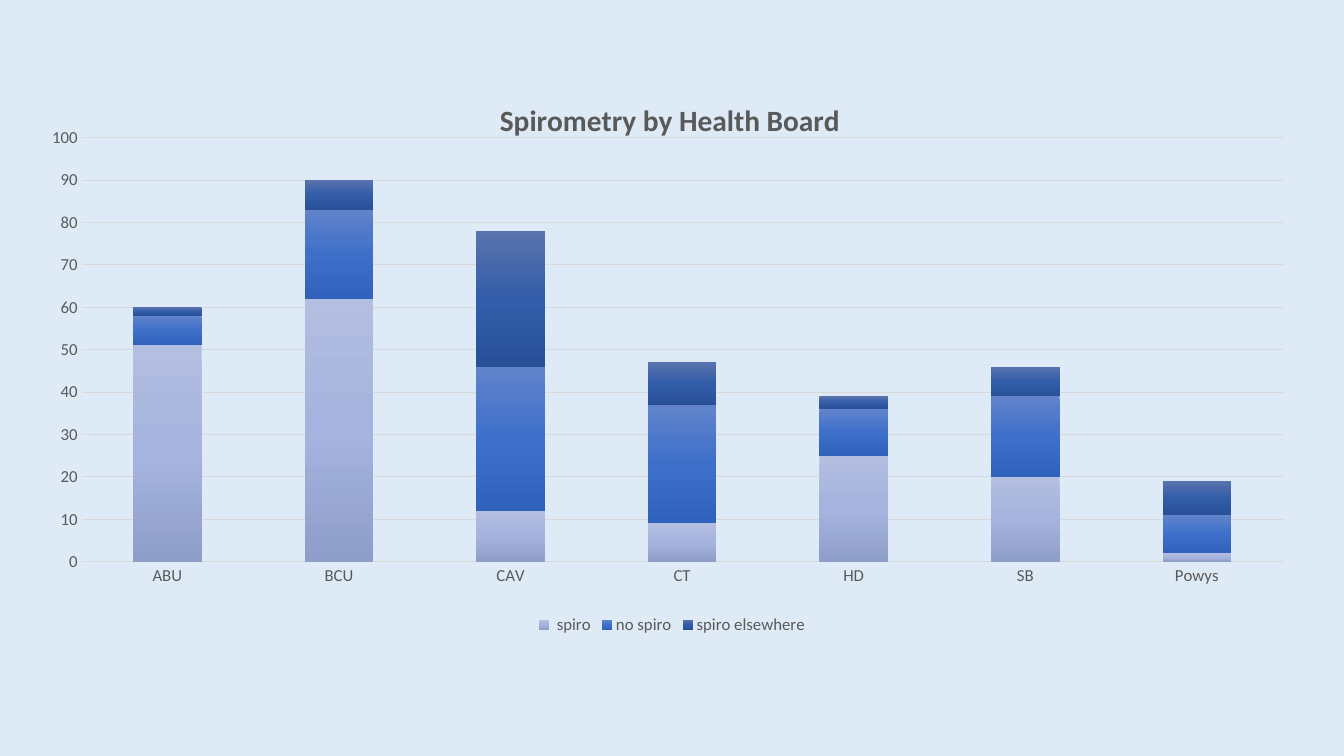
from dataclasses import dataclass
from typing import Optional

from lxml.etree import SubElement
from pptx import Presentation
from pptx.chart.chart import Chart
from pptx.chart.data import CategoryChartData as ChartData
from pptx.chart.series import BarSeries
from pptx.dml.color import RGBColor
from pptx.enum.chart import XL_CHART_TYPE as ChartType
from pptx.enum.chart import XL_LEGEND_POSITION as LegendPosition
from pptx.enum.chart import XL_TICK_MARK as TickMark
from pptx.oxml.ns import qn
from pptx.slide import Slide
from pptx.text.text import Font
from pptx.util import Cm, Pt


@dataclass(frozen=True)
class Theme:
    font: str = "Calibri"
    background: str = "DEEBF7"
    text: str = "595959"
    line: str = "D9D9D9"
    title_size: float = 21
    label_size: float = 12
    axis_width: float = 1
    grid_width: float = 0.75


@dataclass(frozen=True)
class SpirometryGroup:
    name: str
    values: tuple[int, ...]
    gradient: tuple[str, str, str]  # top, middle, bottom


@dataclass(frozen=True)
class Layout:
    x: float
    y: float
    w: Optional[float] = None
    h: Optional[float] = None


THEME = Theme()
HEALTH_BOARDS = ("ABU", "BCU", "CAV", "CT", "HD", "SB", "Powys")
GROUPS = (
    SpirometryGroup(" spiro", (51, 62, 12, 9, 25, 20, 2),
                    ("B3BEE0", "A5B3DE", "8F9EC8")),
    SpirometryGroup("no spiro", (7, 21, 34, 28, 11, 19, 9),
                    ("6183CB", "3E70CA", "3062BB")),
    SpirometryGroup("spiro elsewhere", (2, 7, 32, 10, 3, 7, 8),
                    ("5973AE", "335DA8", "29519A")),
)
# Fractions of the chart area
TITLE_LAYOUT = Layout(0.36, 0.04)
PLOT_LAYOUT = Layout(0.034, 0.117, 0.948, 0.747)


def style_font(font: Font, size: float, bold: bool = False) -> None:
    font.name = THEME.font
    font.size = Pt(size)
    font.bold = bold
    font.color.rgb = RGBColor.from_string(THEME.text)


def place(element, layout: Layout, index: int) -> None:
    """Give a chart title or plot area a fixed position."""
    for old in element.findall(qn("c:layout")):
        element.remove(old)
    holder = SubElement(element, qn("c:layout"))
    element.insert(index, holder)
    manual = SubElement(holder, qn("c:manualLayout"))
    settings = {"xMode": "edge", "yMode": "edge", "x": layout.x, "y": layout.y}
    if layout.w is not None:
        settings = {"layoutTarget": "inner", **settings, "w": layout.w, "h": layout.h}
    for tag, value in settings.items():
        SubElement(manual, qn(f"c:{tag}"), val=str(value))


def fill_gradient(series: BarSeries, colors: tuple[str, ...]) -> None:
    fill = series.format.fill
    fill.gradient()
    fill.gradient_angle = 270  # counter-clockwise: runs from top to bottom
    stops = series._element.find(f".//{qn('a:gsLst')}")
    for old in list(stops):
        stops.remove(old)
    for number, color in enumerate(colors):
        position = number * 100000 // (len(colors) - 1)
        stop = SubElement(stops, qn("a:gs"), pos=str(position))
        SubElement(stop, qn("a:srgbClr"), val=color)


def add_spirometry_chart(slide: Slide) -> Chart:
    data = ChartData()
    data.categories = HEALTH_BOARDS
    for group in GROUPS:
        data.add_series(group.name, group.values)
    chart = slide.shapes.add_chart(
        ChartType.COLUMN_STACKED, Cm(0.97), Cm(1.8), Cm(31.93), Cm(14.3), data
    ).chart
    style_font(chart.font, THEME.label_size)

    # Stacked columns
    plot = chart.plots[0]
    plot.gap_width, plot.overlap = 150, 100
    plot.vary_by_categories = False
    for series, group in zip(plot.series, GROUPS):
        fill_gradient(series, group.gradient)
    place(chart._chartSpace.chart.plotArea, PLOT_LAYOUT, 0)
    return chart


def style_title_and_legend(chart: Chart) -> None:
    chart.has_title = True
    title = chart.chart_title
    run = title.text_frame.paragraphs[0].add_run()
    run.text = "Spirometry by Health Board"
    style_font(run.font, THEME.title_size, bold=True)
    place(title._element, TITLE_LAYOUT, 1)

    chart.has_legend = True
    chart.legend.position = LegendPosition.BOTTOM
    chart.legend.include_in_layout = False
    style_font(chart.legend.font, THEME.label_size)


def style_axes(chart: Chart) -> None:
    for axis in (chart.category_axis, chart.value_axis):
        axis.major_tick_mark = axis.minor_tick_mark = TickMark.NONE
        style_font(axis.tick_labels.font, THEME.label_size)
    values = chart.value_axis
    values.minimum_scale, values.maximum_scale, values.major_unit = 0, 100, 10
    values.format.line.fill.background()
    values.has_major_gridlines = True
    for line, width in (
        (chart.category_axis.format.line, THEME.axis_width),
        (values.major_gridlines.format.line, THEME.grid_width),
    ):
        line.color.rgb = RGBColor.from_string(THEME.line)
        line.width = Pt(width)


def main() -> None:
    presentation = Presentation()
    presentation.slide_width, presentation.slide_height = Cm(33.87), Cm(19.05)
    slide = presentation.slides.add_slide(presentation.slide_layouts[6])
    background = slide.background.fill
    background.solid()
    background.fore_color.rgb = RGBColor.from_string(THEME.background)

    chart = add_spirometry_chart(slide)
    style_title_and_legend(chart)
    style_axes(chart)
    presentation.save("out.pptx")


if __name__ == "__main__":
    main()
